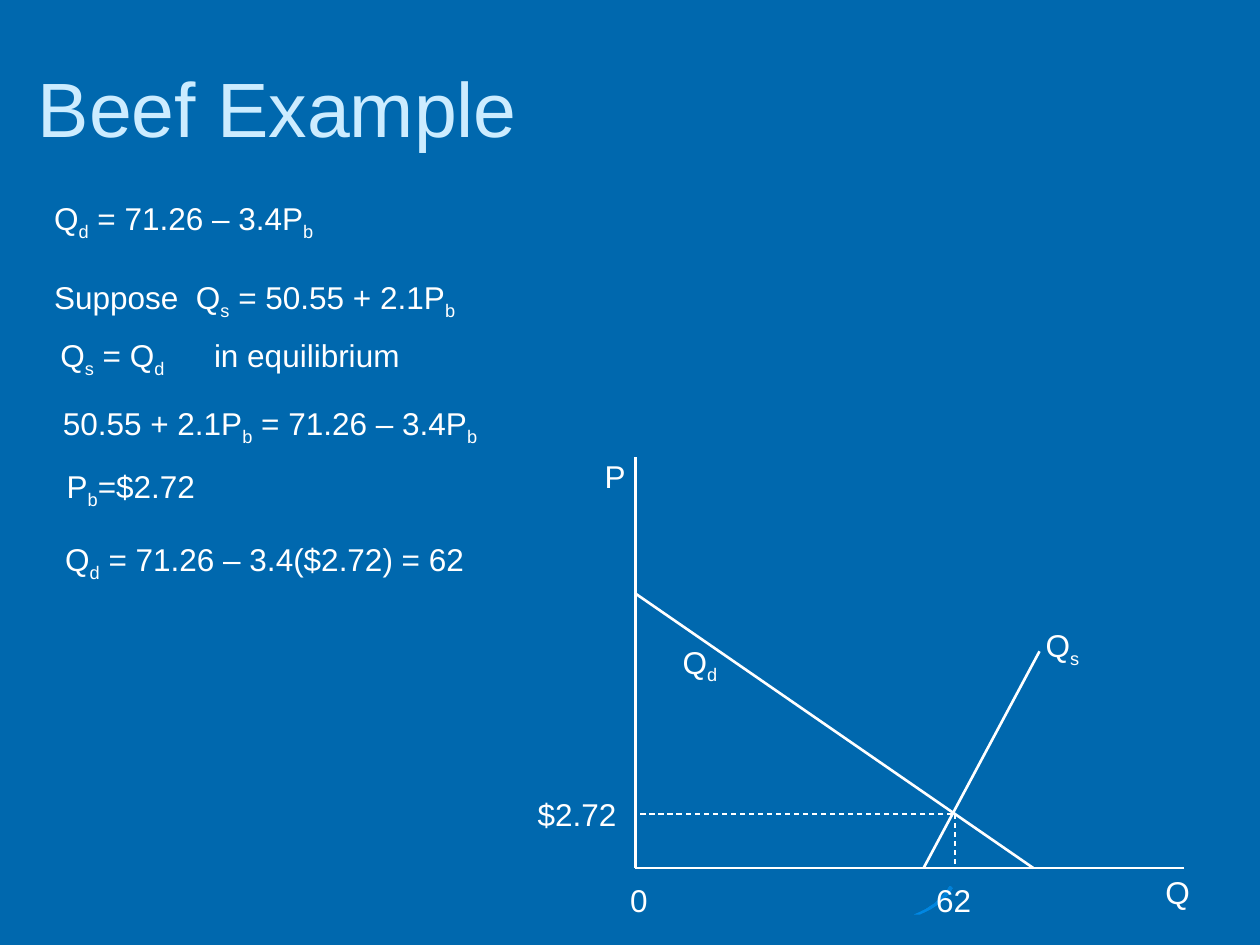
from pptx import Presentation
from pptx.dml.color import RGBColor
from pptx.enum.dml import MSO_LINE_DASH_STYLE as Dash
from pptx.enum.shapes import MSO_CONNECTOR as Link
from pptx.enum.text import MSO_ANCHOR as Anchor, MSO_AUTO_SIZE as Fit, PP_ALIGN as Align
from pptx.oxml.ns import qn
from pptx.util import Pt
from lxml.etree import SubElement

BLUE = RGBColor(0x00, 0x68, 0xAE)
PALE = RGBColor(0xCC, 0xEC, 0xFF)
WHITE = RGBColor(0xFF, 0xFF, 0xFF)
GLOW = RGBColor(0x00, 0x88, 0xE4), RGBColor(0x00, 0x81, 0xD8)

AXIS, BASE = 363, 496
PRICE, COUNT = 465.1, 545.8

SWOOSH = [(522, 522.7), (525.6, 522.7), (531.4, 519.8), (537.1, 516.2),
          (541.4, 511.9), (544.3, 507.6), (543.6, 506.9), (542.9, 506.2),
          (539.3, 511.2), (534.2, 516.2), (528.5, 519.8)]

# text, left, top, width, height; "_" lowers the next letter
STEPS = [
    ("Q_d = 71.26 – 3.4P_b", 23.8, 110.2, 168.5, 29),
    ("Suppose  Q_s = 50.55 + 2.1P_b", 23.8, 155.5, 336, 29),
    ("Q_s = Q_d", 27.4, 188.6, 105, 36),
    ("50.55 + 2.1P_b = 71.26 – 3.4P_b", 28.8, 227.5, 270, 29),
    ("P_b=$2.72", 31, 263.5, 122.4, 36),
    ("in equilibrium", 115.2, 188.6, 212.4, 29),
    ("Q_d = 71.26 – 3.4($2.72) = 62", 30.2, 305.3, 282, 29),
]
LABELS = [
    ("0", 353.5, 499.7, 13.7, 21),
    ("Q", 658.8, 495.4, 37.4, 29),
    ("P", 338.4, 257.8, 46.8, 29),
    ("Q_d", 383, 363.6, 35.3, 29),
    ("Q_s", 590.4, 354.2, 34.6, 29),
    ("$2.72", 300.2, 450.7, 80, 29),
    ("62", 527.8, 499.7, 54, 29),
]
# start x, y, end x, y
CURVES = [
    (AXIS, 261.4, AXIS, BASE),
    (676.8, BASE, AXIS, BASE),
    (AXIS, 339.1, 590.4, BASE),
    (594, 372.2, 527.8, BASE),
]
GUIDES = [
    (544.3, PRICE, 363.6, PRICE),
    (COUNT, PRICE, COUNT, BASE),
]


class Pen:
    font = {"name": "Arial", "size": Pt(18), "bold": False}

    def __init__(self, slide):
        self.slide = slide
        self.shapes = slide.shapes

    def ground(self, color):
        fill = self.slide.background.fill
        fill.solid()
        fill.fore_color.rgb = color

    def style(self, run, color, **extra):
        for key, value in {**self.font, **extra}.items():
            setattr(run.font, key, value)
        run.font.color.rgb = color

    def title(self, text, *box):
        shape = self.shapes.title
        for key, value in zip(("left", "top", "width", "height"), box):
            setattr(shape, key, Pt(value))
        frame = shape.text_frame
        frame.vertical_anchor = Anchor.MIDDLE
        para = frame.paragraphs[0]
        para.alignment = Align.LEFT
        run = para.add_run()
        run.text = text
        self.style(run, PALE, size=Pt(44))

    def text(self, text, *box):
        frame = self.shapes.add_textbox(*map(Pt, box)).text_frame
        frame.word_wrap = True
        frame.auto_size = Fit.SHAPE_TO_FIT_TEXT
        first, *rest = text.split("_")
        parts = [(first, False)]
        for part in rest:
            parts += [(part[0], True), (part[1:], False)]
        for part, low in parts:
            if part:
                run = frame.paragraphs[0].add_run()
                run.text = part
                self.style(run, WHITE)
                if low:
                    run.font._element.set("baseline", "-25000")

    def line(self, ends, width=1.5, dash=None):
        link = self.shapes.add_connector(Link.STRAIGHT, *map(Pt, ends))
        link.line.color.rgb = WHITE
        link.line.width = Pt(width)
        if dash:
            link.line.dash_style = dash
        SubElement(link._element.spPr, qn("a:effectLst"))

    def patch(self, points, colors):
        """Draw a closed outline with a two-colour gradient."""
        first, *rest = [(Pt(x), Pt(y)) for x, y in points]
        form = self.shapes.build_freeform(*first)
        form.add_line_segments(rest, close=True)
        shape = form.convert_to_shape()
        shape.shadow.inherit = False
        shape.line.fill.background()
        shape.fill.gradient()
        shape.fill.gradient_angle = 45
        for stop, color in zip(shape.fill.gradient_stops, colors):
            stop.color.rgb = color


def main():
    deck = Presentation()
    deck.slide_width, deck.slide_height = Pt(720), Pt(540)
    pen = Pen(deck.slides.add_slide(deck.slide_layouts[5]))
    pen.ground(BLUE)
    pen.patch(SWOOSH, GLOW)
    pen.title("Beef Example", 14.4, 15.8, 648, 90)
    for step in STEPS:
        pen.text(*step)
    for curve in CURVES:
        pen.line(curve)
    for guide in GUIDES:
        pen.line(guide, 0.75, Dash.DASH)
    for label in LABELS:
        pen.text(*label)
    deck.save("out.pptx")


if __name__ == "__main__":
    main()
